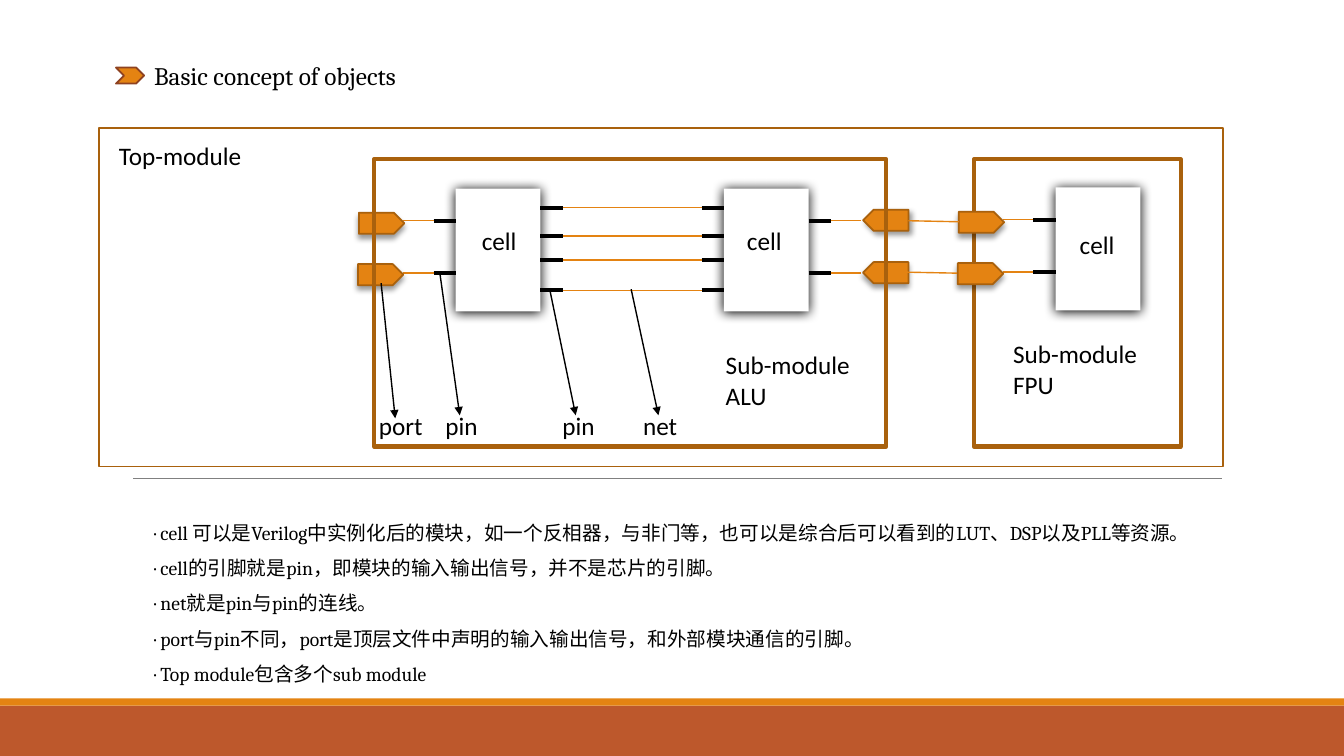
from dataclasses import dataclass

from lxml import etree
from pptx import Presentation
from pptx.dml.color import RGBColor
from pptx.enum.shapes import MSO_CONNECTOR, MSO_SHAPE
from pptx.enum.text import MSO_AUTO_SIZE
from pptx.oxml.ns import qn
from pptx.util import Inches, Pt

RECTANGLE = MSO_SHAPE.RECTANGLE
CHEVRON = MSO_SHAPE.CHEVRON
PENTAGON = MSO_SHAPE.PENTAGON
STRAIGHT = MSO_CONNECTOR.STRAIGHT
FIT_SHAPE = MSO_AUTO_SIZE.SHAPE_TO_FIT_TEXT


@dataclass(frozen=True)
class Theme:
    black: str = "000000"
    white: str = "FFFFFF"
    grey: str = "808080"
    orange: str = "E48312"
    rust: str = "BD582C"
    brown: str = "A9610D"
    dark_rust: str = "8E4221"
    heading_font: str = "Cambria"
    label_font: str = "Calibri"
    label_size: int = 18
    note_size: int = 14


class Diagram:
    def __init__(self, page, theme):
        self.page = page
        self.theme = theme

    def shape(self, kind, left, top, width, height, fill=None, line=None, weight=1.25):
        shape = self.page.shapes.add_shape(
            kind, Inches(left), Inches(top), Inches(width), Inches(height))
        shape.shadow.inherit = False
        if fill:
            shape.fill.solid()
            shape.fill.fore_color.rgb = RGBColor.from_string(fill)
        else:
            shape.fill.background()
        if line:
            shape.line.color.rgb = RGBColor.from_string(line)
            shape.line.width = Pt(weight)
        else:
            shape.line.fill.background()
        return shape

    def cast_shadow(self, shape, opacity, blur, distance, angle=90):
        effects = shape._element.spPr.find(qn("a:effectLst"))
        shadow = etree.SubElement(
            effects, qn("a:outerShdw"), blurRad=str(Pt(blur)),
            dist=str(Pt(distance)), dir=str(angle * 60000), rotWithShape="0")
        color = etree.SubElement(shadow, qn("a:srgbClr"), val=self.theme.black)
        etree.SubElement(color, qn("a:alpha"), val=str(opacity * 1000))

    def line(self, start_x, start_y, end_x, end_y, color, weight, arrow=False):
        line = self.page.shapes.add_connector(
            STRAIGHT, Inches(start_x), Inches(start_y), Inches(end_x), Inches(end_y))
        line.line.color.rgb = RGBColor.from_string(color)
        line.line.width = Pt(weight)
        properties = line._element.spPr
        if arrow:
            etree.SubElement(properties.find(qn("a:ln")), qn("a:tailEnd"), type="triangle")
        etree.SubElement(properties, qn("a:effectLst"))

    def text(self, left, top, width, height, lines, font=None, size=None, spacing=None):
        box = self.page.shapes.add_textbox(
            Inches(left), Inches(top), Inches(width), Inches(height))
        frame = box.text_frame
        frame.word_wrap = True
        frame.auto_size = FIT_SHAPE
        for index, words in enumerate(lines):
            para = frame.add_paragraph() if index else frame.paragraphs[0]
            if spacing:
                para.line_spacing = spacing
            span = para.add_run()
            span.text = words
            span.font.name = font or self.theme.label_font
            span.font.size = Pt(size or self.theme.label_size)
            span.font.color.rgb = RGBColor.from_string(self.theme.black)

    def module(self, left, top, width, height, weight):
        self.shape(RECTANGLE, left, top, width, height,
                   line=self.theme.brown, weight=weight)

    def cell(self, left, top, label_left, label_top):
        cell = self.shape(RECTANGLE, left, top, 0.84, 1.22, self.theme.white)
        self.cast_shadow(cell, 100, 8.5, 1)
        self.text(label_left, label_top, 0.59, 0.4, ["cell"])

    def port(self, left, top, rotation=0, angle=90):
        port = self.shape(PENTAGON, left, top, 0.45, 0.21,
                          self.theme.orange, self.theme.brown)
        port.rotation = rotation
        self.cast_shadow(port, 40, 4, 3, angle)

    def pin(self, left, y):
        self.line(left, y, left + 0.22, y, self.theme.black, 3)

    def net(self, start_x, start_y, end_x, end_y):
        self.line(start_x, start_y, end_x, end_y, self.theme.orange, 1)


def main():
    deck = Presentation()
    deck.slide_width = Inches(13.33)
    deck.slide_height = Inches(7.5)
    page = deck.slides.add_slide(deck.slide_layouts[6])
    theme = Theme()
    diagram = Diagram(page, theme)

    diagram.shape(RECTANGLE, 0, 7, 13.33, 0.5, theme.rust)
    diagram.shape(RECTANGLE, 0, 6.93, 13.33, 0.07, theme.orange)
    diagram.line(1.32, 4.75, 12.12, 4.75, theme.grey, 0.5)
    diagram.text(1.43, 0.55, 4.09, 0.4, ["Basic concept of objects"], theme.heading_font)
    diagram.shape(CHEVRON, 1.15, 0.67, 0.28, 0.16, theme.orange, theme.dark_rust)

    diagram.cell(4.52, 1.87, 4.68, 2.19)
    diagram.cell(7.18, 1.87, 7.31, 2.19)
    for y in (2.06, 2.34, 2.58, 2.88):
        diagram.pin(5.36, y)
        diagram.pin(6.96, y)
        diagram.net(5.58, y, 6.96, y)
    for y in (2.19, 2.71):
        diagram.pin(4.3, y)
        diagram.pin(8.02, y)
        diagram.net(4, y, 4.3, y)
        diagram.net(8.24, y, 8.54, y)

    diagram.port(8.56, 2.08, 180, 45)
    diagram.port(8.56, 2.6, 180)
    diagram.port(3.56, 2.11)
    diagram.port(3.55, 2.62)

    callouts = (
        ("port", 3.66, 0.91, (3.78, 2.81, 3.92, 4.15)),
        ("pin", 4.32, 0.59, (4.36, 2.69, 4.56, 4.12)),
        ("pin", 5.48, 0.59, (5.45, 2.86, 5.71, 4.12)),
        ("net", 6.28, 0.59, (6.26, 2.87, 6.53, 4.12)),
    )
    for label, left, width, arrow in callouts:
        diagram.line(*arrow, theme.black, 1, arrow=True)
        diagram.text(left, 4.02, width, 0.4, [label])

    notes = (
        "· cell 可以是Verilog中实例化后的模块，如一个反相器，与非门等，也可以是综合后可以看到的LUT、DSP以及PLL等资源。",
        "· cell的引脚就是pin，即模块的输入输出信号，并不是芯片的引脚。",
        "· net就是pin与pin的连线。",
        "· port与pin不同，port是顶层文件中声明的输入输出信号，和外部模块通信的引脚。",
        "· Top module包含多个sub module",
    )
    diagram.text(1.43, 5, 10.7, 1.87, notes, theme.heading_font, theme.note_size, 1.5)

    diagram.module(0.98, 1.27, 11.15, 3.36, 1.25)
    diagram.text(1.08, 1.34, 1.47, 0.4, ["Top-module"])
    diagram.module(3.71, 1.58, 5.08, 2.85, 3)
    diagram.text(7.1, 3.42, 1.47, 0.71, ["Sub-module", "ALU"])
    diagram.module(9.66, 1.58, 2.05, 2.85, 3)
    diagram.text(9.95, 3.31, 1.47, 0.71, ["Sub-module", "FPU"])

    diagram.cell(10.47, 1.86, 10.61, 2.23)
    for y in (2.18, 2.7):
        diagram.pin(10.25, y)
        diagram.net(9.95, y, 10.25, y)
    diagram.port(9.51, 2.1)
    diagram.port(9.5, 2.61)
    diagram.net(9.01, 2.19, 9.51, 2.2)
    diagram.net(8.99, 2.7, 9.49, 2.71)

    deck.save("out.pptx")


if __name__ == "__main__":
    main()
